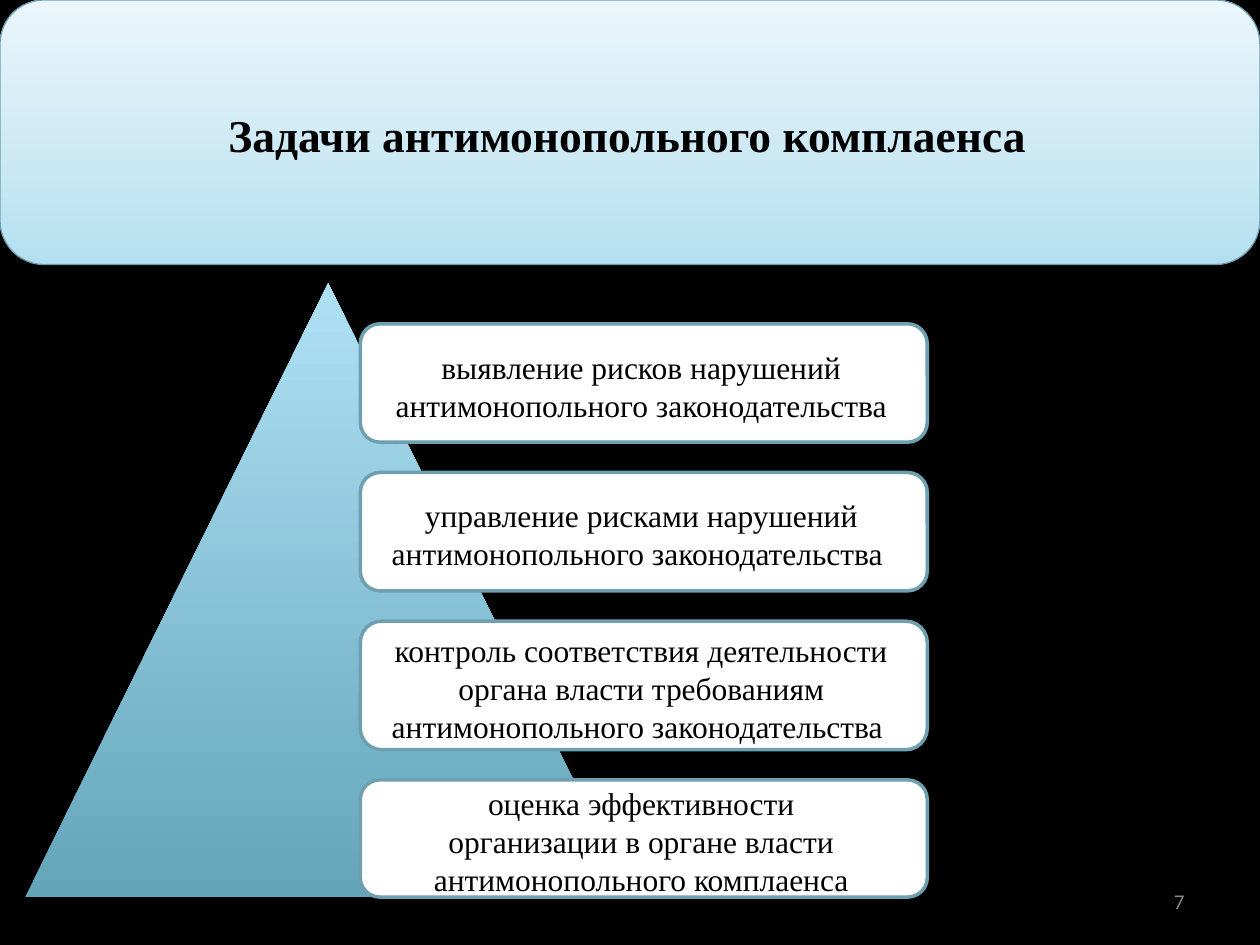
"""Build a slide on the tasks of antimonopoly compliance."""
from copy import deepcopy

from pptx import Presentation
from pptx.dml.color import RGBColor
from pptx.enum.shapes import MSO_SHAPE
from pptx.enum.text import MSO_ANCHOR, PP_ALIGN
from pptx.util import Inches, Pt

BLACK = RGBColor(0x00, 0x00, 0x00)
WHITE = RGBColor(0xFF, 0xFF, 0xFF)
GRAY = RGBColor(0x89, 0x89, 0x89)
TITLE_LINE = RGBColor(0x6A, 0x9D, 0xAE)
TASK_LINE = RGBColor(0x6E, 0xA0, 0xB0)
TITLE_STOPS = [
    (0, RGBColor(0xB4, 0xDF, 0xF0)),
    (0.35, RGBColor(0xCA, 0xE8, 0xF4)),
    (1, RGBColor(0xEA, 0xF6, 0xFB)),
]
PYRAMID_STOPS = [
    (0, RGBColor(0x64, 0xA5, 0xBA)),
    (1, RGBColor(0xAF, 0xE1, 0xF5)),
]
TASKS = [
    (9.4, ["выявление рисков нарушений антимонопольного законодательства"]),
    (9.4, ["управление рисками нарушений антимонопольного законодательства "]),
    (10.2, ["контроль соответствия деятельности органа власти требованиям "
            "антимонопольного законодательства "]),
    (9.3, ["оценка эффективности", "организации в органе власти",
           "антимонопольного комплаенса"]),
]
TASK_GAP = 2.4

deck = Presentation()
deck.slide_width, deck.slide_height = Inches(10), Inches(7.5)
column, row = deck.slide_width / 100, deck.slide_height / 75
page = deck.slides.add_slide(deck.slide_layouts[6])
page.background.fill.solid()
page.background.fill.fore_color.rgb = BLACK


def add_block(kind, left, top, width, height, stops):
    block = page.shapes.add_shape(kind, int(left * column), int(top * row),
                                  int(width * column), int(height * row))
    block.shadow.inherit = False
    if len(stops) == 1:
        block.fill.solid()
        block.fill.fore_color.rgb = stops[0][1]
        return block
    block.fill.gradient()
    block.fill.gradient_angle = 90
    stop_list = block.fill._fill._gradFill.gsLst
    for extra in stops[2:]:
        stop_list.append(deepcopy(stop_list[-1]))
    for stop, (position, color) in zip(block.fill.gradient_stops, stops):
        stop.position = position
        stop.color.rgb = color
    return block


def write(box, lines, size, color=BLACK, font="Times New Roman",
          align=PP_ALIGN.CENTER, bold=False, insets=(0.12, 0.12, 0.16, 0.08)):
    frame = box.text_frame
    frame.word_wrap = True
    frame.vertical_anchor = MSO_ANCHOR.MIDDLE
    (frame.margin_left, frame.margin_top,
     frame.margin_right, frame.margin_bottom) = map(Inches, insets)
    frame.text = "\n".join(lines)
    for para in frame.paragraphs:
        para.alignment = align
        para.font.name = font
        para.font.size = Pt(size)
        para.font.bold = bold
        para.font.color.rgb = color


number = page.shapes.add_textbox(int(71.7 * column), int(69.5 * row),
                                 int(23.3 * column), int(4 * row))
write(number, ["7"], 12, GRAY, "Calibri", PP_ALIGN.RIGHT,
      insets=(0.1, 0.05, 0.1, 0.05))

title = add_block(MSO_SHAPE.ROUNDED_RECTANGLE, 0, 0, 100, 21, TITLE_STOPS)
title.line.color.rgb = TITLE_LINE
title.line.width = Pt(0.75)
write(title, ["Задачи антимонопольного комплаенса"], 26, bold=True)

pyramid = add_block(MSO_SHAPE.ISOSCELES_TRIANGLE, 2, 22.5, 48.1, 48.7,
                    PYRAMID_STOPS)
pyramid.line.fill.background()

top = 25.7
for height, lines in TASKS:
    task = add_block(MSO_SHAPE.ROUNDED_RECTANGLE, 28.6, top, 45, height,
                     [(0, WHITE)])
    task.line.color.rgb = TASK_LINE
    task.line.width = Pt(2)
    write(task, lines, 18)
    top += height + TASK_GAP

deck.save("out.pptx")
